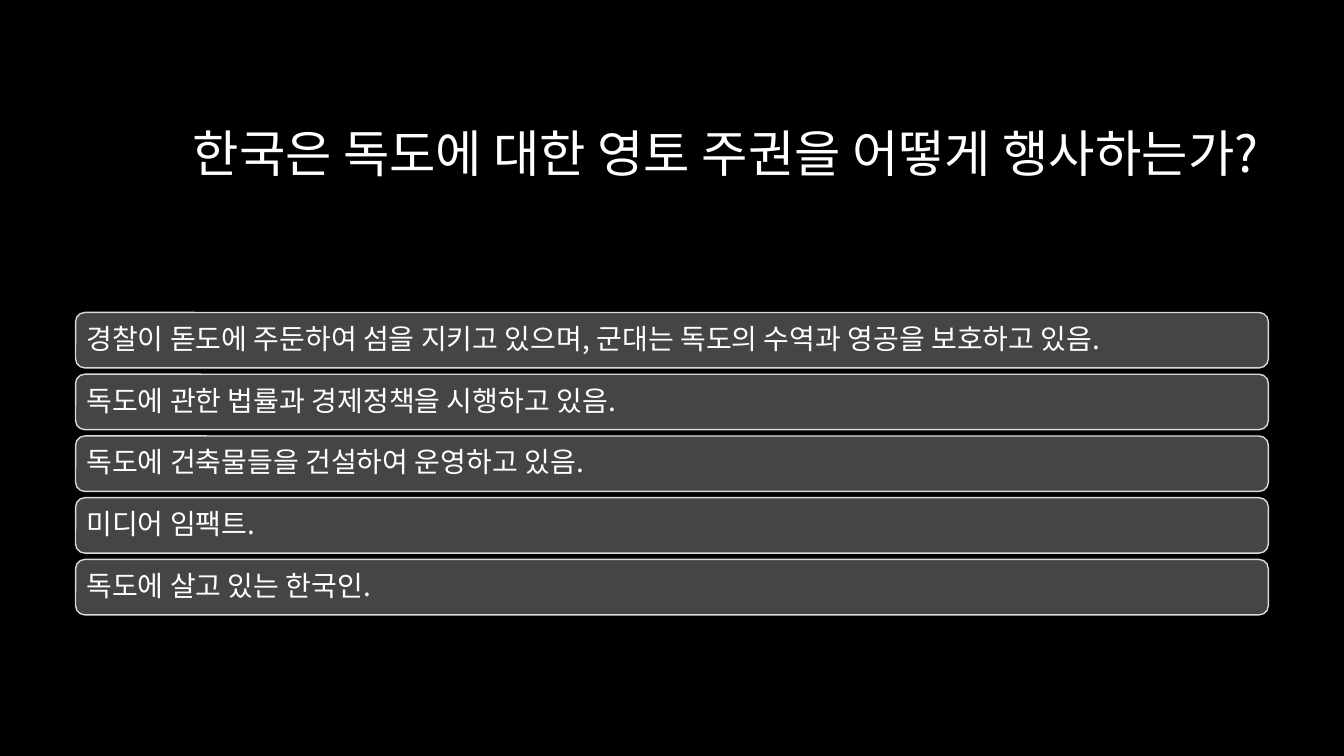
from lxml.etree import SubElement as Sub
from pptx import Presentation
from pptx.dml.color import RGBColor
from pptx.enum.shapes import MSO_SHAPE as Shape
from pptx.enum.text import MSO_ANCHOR as Anchor, MSO_AUTO_SIZE as Fit, PP_ALIGN as Align
from pptx.oxml.ns import qn
from pptx.util import Inches, Pt


def color(code):
    return RGBColor.from_string(code)


class Deck:
    font = "Noto Sans CJK KR"
    ink, back, panel, edge = "FFFFFF", "000000", "454545", "DADADA"
    left, width = 0.75, 11.83

    def __init__(self):
        self.prs = Presentation()
        self.prs.slide_width = Inches(13.33)
        self.prs.slide_height = Inches(7.5)
        self.slide = self.prs.slides.add_slide(self.prs.slide_layouts[5])
        fill = self.slide.background.fill
        fill.solid()
        fill.fore_color.rgb = color(self.back)

    def label(self, frame, text, size, align, after=0):
        frame.word_wrap = True
        frame.auto_size = Fit.NONE
        frame.vertical_anchor = Anchor.MIDDLE
        para = frame.paragraphs[0]
        para.alignment = align
        para.line_spacing = 0.9
        para.space_after = Pt(after)
        run = para.add_run()
        run.text = text
        run.font.size = Pt(size)
        run.font.color.rgb = color(self.ink)
        run.font.name = self.font
        # Hangul takes the East Asian typeface
        Sub(run.font._element, qn("a:ea"), typeface=self.font)

    def title(self, text, top, height):
        box = self.slide.shapes.title
        box.left, box.top = Inches(self.left), Inches(top)
        box.width, box.height = Inches(self.width), Inches(height)
        self.label(box.text_frame, text, 36, Align.RIGHT)

    def bar(self, text, top, height):
        box = self.slide.shapes.add_shape(
            Shape.ROUNDED_RECTANGLE, Inches(self.left), Inches(top),
            Inches(self.width), Inches(height))
        box.shadow.inherit = False
        box.fill.solid()
        box.fill.fore_color.rgb = color(self.panel)
        box.line.color.rgb = color(self.edge)
        box.line.width = Pt(1)
        frame = box.text_frame
        frame.margin_left = frame.margin_right = Inches(0.08)
        frame.margin_top = frame.margin_bottom = Inches(0.08)
        self.label(frame, text, 20, Align.LEFT, after=7)


def main():
    deck = Deck()

    # Title
    deck.title("한국은 독도에 대한 영토 주권을 어떻게 행사하는가?", 0.84, 1.41)

    # Answers, evenly stacked
    facts = [
        "경찰이 돋도에 주둔하여 섬을 지키고 있으며, 군대는 독도의 수역과 영공을 보호하고 있음.",
        "독도에 관한 법률과 경제정책을 시행하고 있음.",
        "독도에 건축물들을 건설하여 운영하고 있음.",
        "미디어 임팩트.",
        "독도에 살고 있는 한국인.",
    ]
    first, last = 3.1, 5.55
    step = (last - first) / (len(facts) - 1)
    for i, fact in enumerate(facts):
        deck.bar(fact, first + i * step, 0.55)

    deck.prs.save("out.pptx")


if __name__ == "__main__":
    main()
